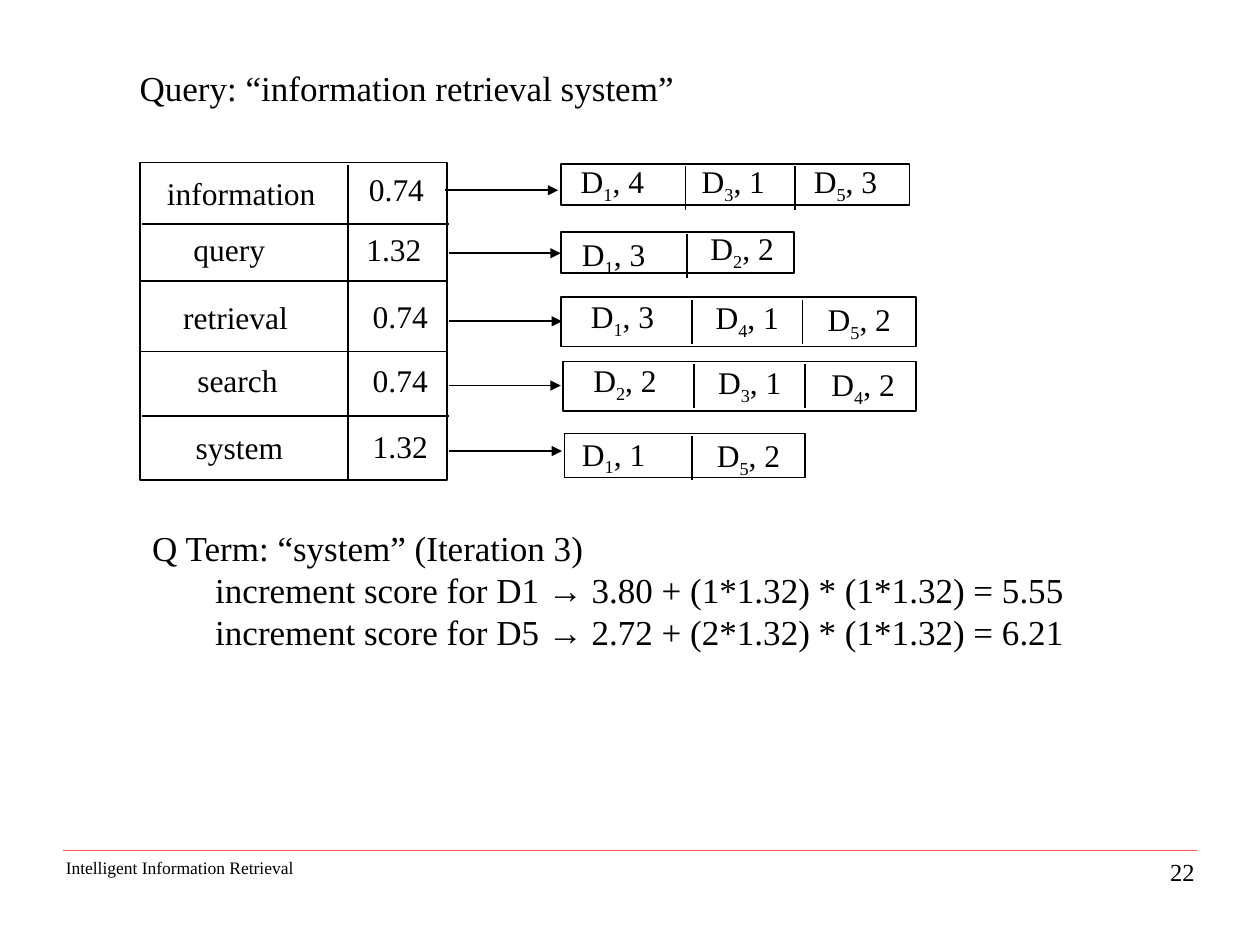
from lxml import etree
from pptx import Presentation
from pptx.dml.color import RGBColor
from pptx.enum.shapes import MSO_CONNECTOR, MSO_SHAPE
from pptx.enum.text import PP_ALIGN
from pptx.oxml.ns import qn
from pptx.util import Inches, Pt

STRAIGHT = MSO_CONNECTOR.STRAIGHT
RECTANGLE = MSO_SHAPE.RECTANGLE
LEFT, CENTER, RIGHT = PP_ALIGN.LEFT, PP_ALIGN.CENTER, PP_ALIGN.RIGHT

INDEX_BOX = (1.11, 1.29, 2.44, 2.52)
INDEX_LINES = [
    (2.76, 1.31, 2.76, 3.8),
    (1.13, 1.78, 3.56, 1.78),
    (1.11, 2.23, 3.55, 2.23),
    (1.11, 2.79, 3.55, 2.79),
    (1.13, 3.3, 3.56, 3.3),
]
TERMS = [
    ("information", 1.22, 1.33, 1.39),
    ("query", 1.43, 1.78, 0.78),
    ("retrieval", 1.35, 2.32, 1.04),
    ("search", 1.46, 2.82, 0.85),
    ("system", 1.45, 3.35, 0.9),
]
WEIGHTS = [
    ("0.74", 2.83, 1.3),
    ("1.32", 2.81, 1.78),
    ("0.74", 2.86, 2.31),
    ("0.74", 2.86, 2.82),
    ("1.32", 2.86, 3.34),
]
ARROWS = [
    (3.53, 4.43, 1.51),
    (3.56, 4.45, 2.01),
    (3.56, 4.46, 2.55),
    (3.56, 4.45, 3.06),
    (3.56, 4.46, 3.58),
]
POSTINGS = [
    ((4.45, 1.3, 2.77, 0.33), (5.44, 6.31),
     [("1", "4", 4.5, 1.24), ("3", "1", 5.46, 1.24), ("5", "3", 6.35, 1.24)]),
    ((4.45, 1.84, 1.85, 0.33), (5.45,),
     [("1", "3", 4.51, 1.82), ("2", "2", 5.53, 1.77)]),
    ((4.45, 2.36, 2.82, 0.39), (5.49, 6.37),
     [("1", "3", 4.58, 2.31), ("4", "1", 5.57, 2.32), ("5", "2", 6.46, 2.33)]),
    ((4.47, 2.87, 2.8, 0.39), (5.51, 6.39),
     [("2", "2", 4.6, 2.82), ("3", "1", 5.59, 2.83), ("4", "2", 6.49, 2.85)]),
    ((4.48, 3.44, 1.91, 0.35), (5.49,),
     [("1", "1", 4.51, 3.4), ("5", "2", 5.58, 3.41)]),
]
SCORES = (
    "Q Term: “system” (Iteration 3)\n"
    "\tincrement score for D1 → 3.80 + (1*1.32) * (1*1.32) = 5.55\n"
    "\tincrement score for D5 → 2.72 + (2*1.32) * (1*1.32) = 6.21"
)


def color(value):
    return RGBColor.from_string(value)


class SlideBuilder:
    """Draws styled boxes, lines and text on one slide."""

    font = "Times New Roman"
    ink = "000000"
    paper = "FFFFFF"

    def __init__(self, slide):
        self.slide = slide

    def box(self, left, top, width, height):
        shape = self.slide.shapes.add_shape(
            RECTANGLE, Inches(left), Inches(top), Inches(width), Inches(height))
        shape.shadow.inherit = False
        shape.fill.solid()
        shape.fill.fore_color.rgb = color(self.paper)
        shape.line.color.rgb = color(self.ink)
        shape.line.width = Pt(1)

    def line(self, x1, y1, x2, y2, stroke=ink, weight=1, arrow=False):
        connector = self.slide.shapes.add_connector(
            STRAIGHT, Inches(x1), Inches(y1), Inches(x2), Inches(y2))
        connector.line.color.rgb = color(stroke)
        connector.line.width = Pt(weight)
        properties = connector._element.spPr
        if arrow:
            etree.SubElement(properties.find(qn("a:ln")), qn("a:tailEnd"), type="triangle")
        etree.SubElement(properties, qn("a:effectLst"))

    def text(self, content, left, top, width, height=0.4, size=18, align=LEFT, wrap=False):
        shape = self.slide.shapes.add_textbox(
            Inches(left), Inches(top), Inches(width), Inches(height))
        frame = shape.text_frame
        frame.word_wrap = wrap
        frame.text = content
        for paragraph in frame.paragraphs:
            paragraph.alignment = align
            paragraph.font.name = self.font
            paragraph.font.size = Pt(size)
            paragraph.font.color.rgb = color(self.ink)
        return frame.paragraphs[0]

    def posting(self, document, count, left, top):
        paragraph = self.text("D", left, top, 0.72, align=CENTER)
        subscript = paragraph.add_run()
        subscript.text = document
        subscript._r.get_or_add_rPr().set("baseline", "-25000")
        paragraph.add_run().text = f", {count}"


def main():
    presentation = Presentation()
    presentation.slide_width, presentation.slide_height = Inches(10), Inches(7.5)
    slide = presentation.slides.add_slide(presentation.slide_layouts[6])
    builder = SlideBuilder(slide)

    builder.line(0.5, 6.75, 9.5, 6.75, stroke="FF5050", weight=0.5)
    builder.text("Intelligent Information Retrieval", 0.42, 6.75, 2.01, 0.27, 10, CENTER)
    builder.text("22", 7.5, 6.75, 2.08, 0.25, 14, RIGHT, wrap=True)
    builder.text("Query: “information retrieval system”", 1.01, 0.48, 4.61, 0.44, 20)
    builder.text(SCORES, 1.11, 4.13, 7.99, 1.11, 20)

    builder.box(*INDEX_BOX)
    for ends in INDEX_LINES:
        builder.line(*ends)
    for term, left, top, width in TERMS:
        builder.text(term, left, top, width, align=CENTER)
    for weight, left, top in WEIGHTS:
        builder.text(weight, left, top, 0.64)
    for start, end, y in ARROWS:
        builder.line(start, y, end, y, arrow=True)

    for frame, dividers, entries in POSTINGS:
        builder.box(*frame)
        top = frame[1] + 0.02
        for x in dividers:
            builder.line(x, top, x, top + 0.35)
        for entry in entries:
            builder.posting(*entry)

    presentation.save("out.pptx")


if __name__ == "__main__":
    main()
